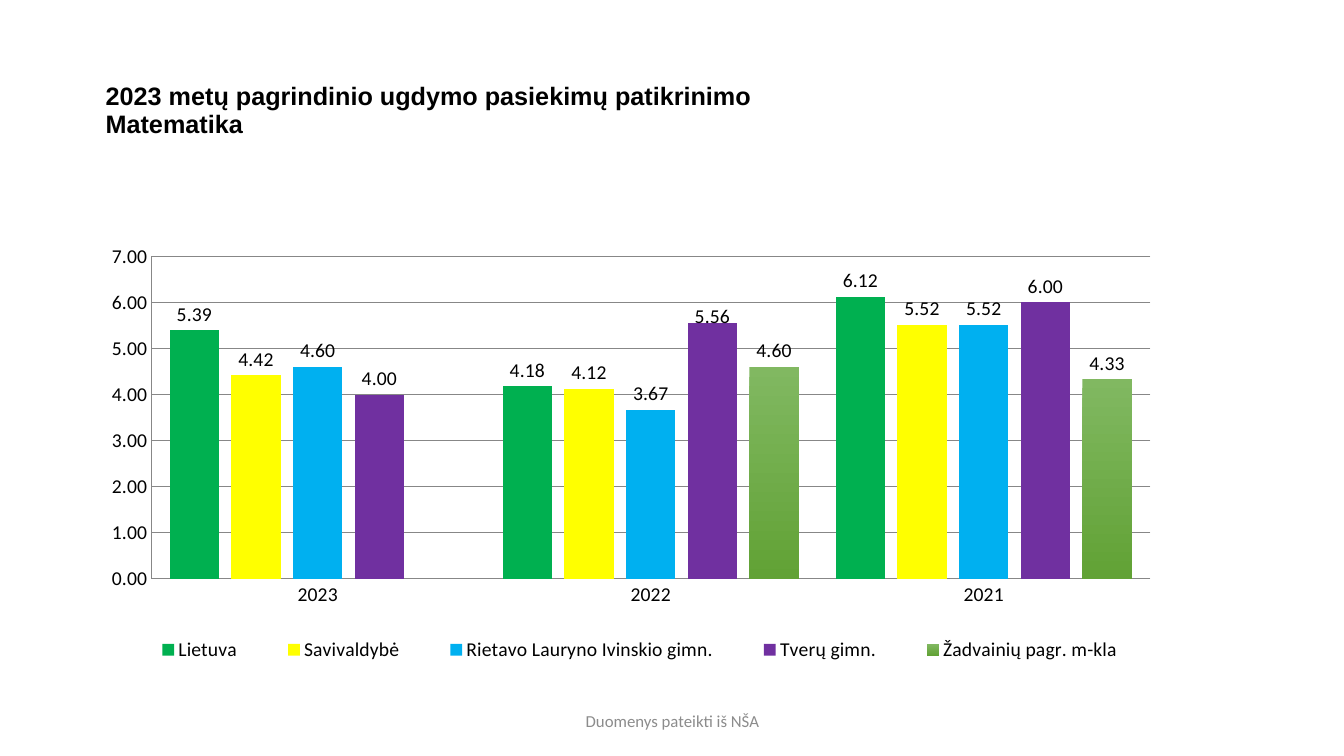
from lxml import etree
from pptx import Presentation
from pptx.chart.data import CategoryChartData
from pptx.dml.color import RGBColor
from pptx.enum import chart as ch, text as tx
from pptx.oxml import ns
from pptx.util import Inches, Pt

COLORS = {"ink": "000000", "note": "8C8C8C", "grid": "878787", "paper": "FFFFFF",
          "green": "00B050", "yellow": "FFFF00", "blue": "00B0F0", "purple": "7030A0",
          "top": "81B861", "base": "61A235"}
SERIES = [
    ("Lietuva", (5.39, 4.18, 6.12), "green"),
    ("Savivaldybė", (4.42, 4.12, 5.52), "yellow"),
    ("Rietavo Lauryno Ivinskio gimn.", (4.6, 3.67, 5.52), "blue"),
    ("Tverų gimn.", (4, 5.56, 6), "purple"),
    ("Žadvainių pagr. m-kla", (None, 4.6, 4.33), None),
]


def rgb(name):
    return RGBColor.from_string(COLORS[name])


def place(parent, index, **values):
    """Give a chart part a manual layout in fractions of the chart."""
    for old in parent.findall(ns.qn("c:layout")):
        parent.remove(old)
    layout = etree.Element(ns.qn("c:layout"))
    manual = etree.SubElement(layout, ns.qn("c:manualLayout"))
    for key, value in values.items():
        etree.SubElement(manual, ns.qn("c:" + key)).set("val", str(value))
    parent.insert(index, layout)


deck = Presentation()
deck.slide_width, deck.slide_height = Inches(13.33), Inches(7.5)
slide = deck.slides.add_slide(deck.slide_layouts[6])

# Title and source note
TEXTS = [
    (("2023 metų pagrindinio ugdymo pasiekimų patikrinimo", "Matematika"),
     (0.95, 0.38, 11.46, 1.45), tx.PP_ALIGN.LEFT, 0.9,
     {"name": "Arial", "size": Pt(18), "bold": True}, "ink"),
    (("Duomenys pateikti iš NŠA",), (4.42, 6.95, 4.5, 0.4), tx.PP_ALIGN.CENTER, 1.0,
     {"name": "Calibri", "size": Pt(12)}, "note"),
]
for lines, box, align, space, style, color in TEXTS:
    frame = slide.shapes.add_textbox(*map(Inches, box)).text_frame
    frame.word_wrap = True
    frame.vertical_anchor = tx.MSO_ANCHOR.MIDDLE
    frame.text = "\n".join(lines)
    for para in frame.paragraphs:
        para.alignment, para.line_spacing = align, space
        font = para.runs[0].font
        for key, value in style.items():
            setattr(font, key, value)
        font.color.rgb = rgb(color)

# Chart data and font
data = CategoryChartData(number_format="0.00")
data.categories = ["2023", "2022", "2021"]
for name, values, color in SERIES:
    data.add_series(name, values)
area = map(Inches, (0.95, 2.01, 11.01, 4.85))
chart = slide.shapes.add_chart(ch.XL_CHART_TYPE.COLUMN_CLUSTERED, *area, data).chart
chart.has_title = False
chart.font.name, chart.font.size = "Calibri", Pt(14)
chart.font.color.rgb = rgb("ink")

# Axes
scale = chart.value_axis
scale.minimum_scale, scale.maximum_scale, scale.major_unit = 0, 7, 1
scale.has_major_gridlines = True
scale.tick_labels.number_format = "0.00"
scale.tick_labels.number_format_is_linked = False
for axis in (scale, chart.category_axis):
    axis.major_tick_mark = axis.minor_tick_mark = ch.XL_TICK_MARK.NONE
for item in (scale, chart.category_axis, scale.major_gridlines):
    item.format.line.color.rgb = rgb("grid")
    item.format.line.width = Pt(0.75)

# Columns and value labels
plot = chart.plots[0]
plot.gap_width, plot.overlap, plot.vary_by_categories = 75, -25, False
for bars, (name, values, color) in zip(plot.series, SERIES):
    fill = bars.format.fill
    if color:
        fill.solid()
        fill.fore_color.rgb = rgb(color)
    else:
        fill.gradient()
        fill.gradient_angle = 270
        for stop, shade in zip(fill.gradient_stops, ("top", "base")):
            stop.color.rgb = rgb(shade)
    bars.invert_if_negative = False
    labels = bars.data_labels
    labels.show_value = True
    labels.position = ch.XL_LABEL_POSITION.OUTSIDE_END
    labels.number_format, labels.number_format_is_linked = "0.00", False

# The 2022 label of the fourth series sits a little lower
plot.series[3].points[1].data_label.position = ch.XL_LABEL_POSITION.OUTSIDE_END
label = plot.series[3].data_labels._element.find(ns.qn("c:dLbl"))
place(label, 1, x=0, y=0.02)

# Legend and plot area
chart.has_legend = True
legend = chart.legend
legend.position = ch.XL_LEGEND_POSITION.BOTTOM
legend.include_in_layout = False
place(legend._element, 1, xMode="edge", yMode="edge", x=0.02, y=0.87, w=0.94, h=0.09)
place(chart._chartSpace.chart.plotArea, 0, layoutTarget="inner", xMode="edge",
      yMode="edge", x=0.05, y=0.11, w=0.9, h=0.66)

deck.save("out.pptx")
